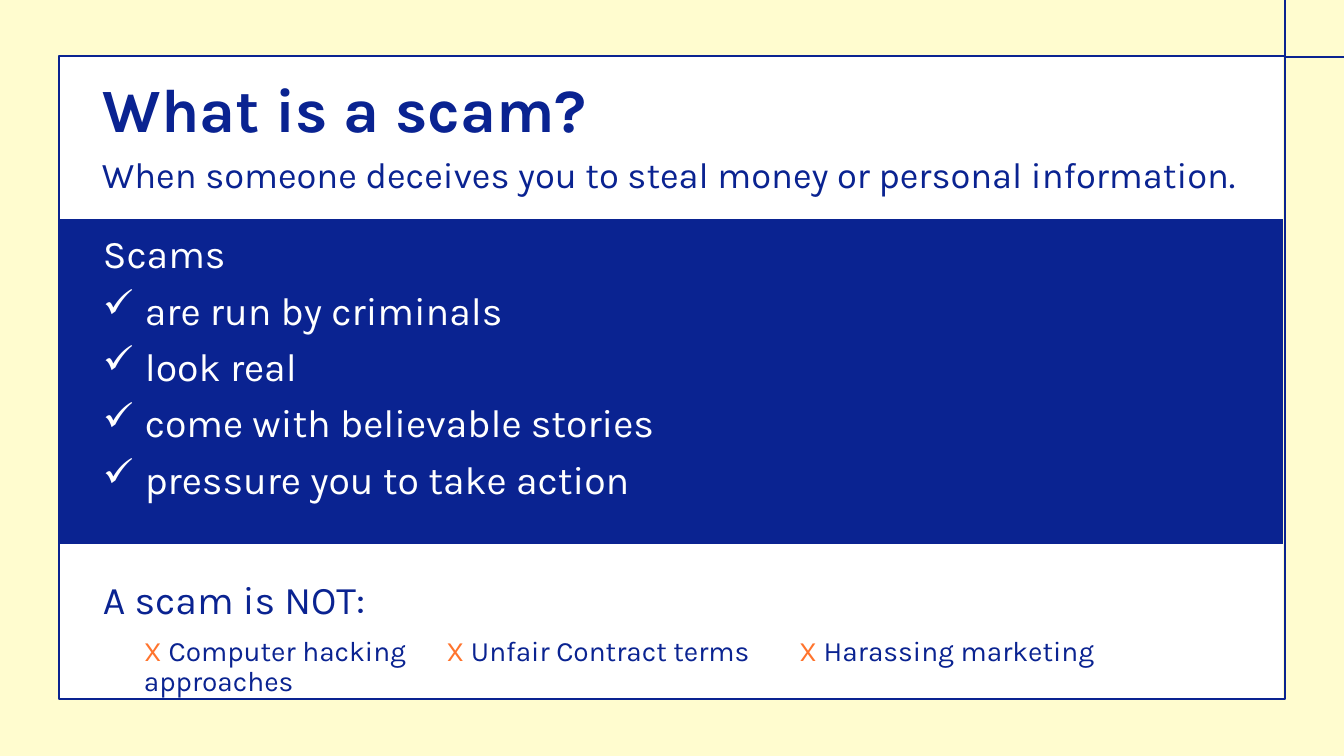
from lxml.etree import SubElement
from pptx import Presentation
from pptx.dml.color import RGBColor
from pptx.enum.shapes import MSO_CONNECTOR, MSO_SHAPE
from pptx.enum.text import MSO_ANCHOR
from pptx.oxml.ns import qn
from pptx.util import Pt

PX = 914400 / 100.8
WIDTH, HEIGHT = 1344, 756
NAVY = RGBColor(0x0A, 0x23, 0x91)
CREAM = RGBColor(0xFF, 0xFC, 0xCF)
ORANGE = RGBColor(0xFF, 0x74, 0x2D)
WHITE = RGBColor(0xFF, 0xFF, 0xFF)


def px(*lengths):
    return [round(length * PX) for length in lengths]


def add_run(paragraph, text, size, color, bold=False):
    run = paragraph.add_run()
    run.text = text
    run.font.name = "Karla"
    run.font.size = Pt(size)
    run.font.bold = bold
    run.font.color.rgb = color


prs = Presentation()
prs.slide_width, prs.slide_height = px(WIDTH, HEIGHT)
slide = prs.slides.add_slide(prs.slide_layouts[6])
slide.background.fill.solid()
slide.background.fill.fore_color.rgb = WHITE

# Blue band, cream margins and outlined frame
panels = [
    (59, 220, 1224, 323, NAVY, NAVY),
    (0, 0, WIDTH, 56, CREAM, None),
    (0, 700, WIDTH, 56, CREAM, None),
    (0, 56, 59, 644, CREAM, None),
    (1283, 56, 61, 644, CREAM, None),
    (59, 56, 1226, 643, None, NAVY),
]
for left, top, width, height, fill, outline in panels:
    panel = slide.shapes.add_shape(MSO_SHAPE.RECTANGLE, *px(left, top, width, height))
    panel.shadow.inherit = False
    if fill:
        panel.fill.solid()
        panel.fill.fore_color.rgb = fill
    else:
        panel.fill.background()
    if outline:
        panel.line.color.rgb = outline
        panel.line.width = Pt(1.5)
    else:
        panel.line.fill.background()

# Corner lines running on to the slide edges
for ends in [(1285, 0, 1285, 57), (1285, 57, WIDTH, 57)]:
    corner_line = slide.shapes.add_connector(MSO_CONNECTOR.STRAIGHT, *px(*ends))
    corner_line.line.color.rgb = NAVY
    corner_line.line.width = Pt(1.5)
    SubElement(corner_line._element.spPr, qn("a:effectLst"))

# Text frames
frames = []
for left, top, height, anchor in [
    (93, 40, 146, MSO_ANCHOR.MIDDLE),
    (92, 152, 61, MSO_ANCHOR.TOP),
    (93, 230, 295, MSO_ANCHOR.TOP),
    (93, 576, 120, MSO_ANCHOR.TOP),
]:
    frame = slide.shapes.add_textbox(*px(left, top, 1159, height)).text_frame
    frame.word_wrap = True
    frame.vertical_anchor = anchor
    frame.paragraphs[0].line_spacing = 0.9
    frames.append(frame)
title, definition, traits, exclusions = frames

# Headings
for frame, text, size, color, bold in [
    (title, "What is a scam?", 44, NAVY, True),
    (definition, "When someone deceives you to steal money or personal information.",
     25.9, NAVY, False),
    (traits, "Scams", 28, WHITE, False),
    (exclusions, "A scam is NOT:", 28, NAVY, False),
]:
    add_run(frame.paragraphs[0], text, size, color, bold)

# Ticked traits
indent = px(42)[0]
for trait in ["are run by criminals", "look real", "come with believable stories",
              "pressure you to take action"]:
    item = traits.add_paragraph()
    item.line_spacing = 0.9
    item.space_before = Pt(10)
    properties = item._p.get_or_add_pPr()
    properties.set("marL", str(indent))
    properties.set("indent", str(-indent))
    SubElement(properties, qn("a:buChar"), char="✓")
    add_run(item, trait, 28, WHITE)

# Exclusions on one line, spaced by tab stops
crossed = exclusions.add_paragraph()
crossed.line_spacing = 0.9
crossed.space_before = Pt(10)
properties = crossed._p.get_or_add_pPr()
properties.set("marL", str(px(41)[0]))
properties.set("indent", "0")
tabs = SubElement(properties, qn("a:tabLst"))
for stop in px(323, 647):
    SubElement(tabs, qn("a:tab"), pos=str(stop), algn="l")
for text in ["Computer hacking\t", "Unfair Contract terms\t",
             "Harassing marketing approaches"]:
    add_run(crossed, "X", 20, ORANGE)
    add_run(crossed, " " + text, 20, NAVY)

prs.save("out.pptx")
